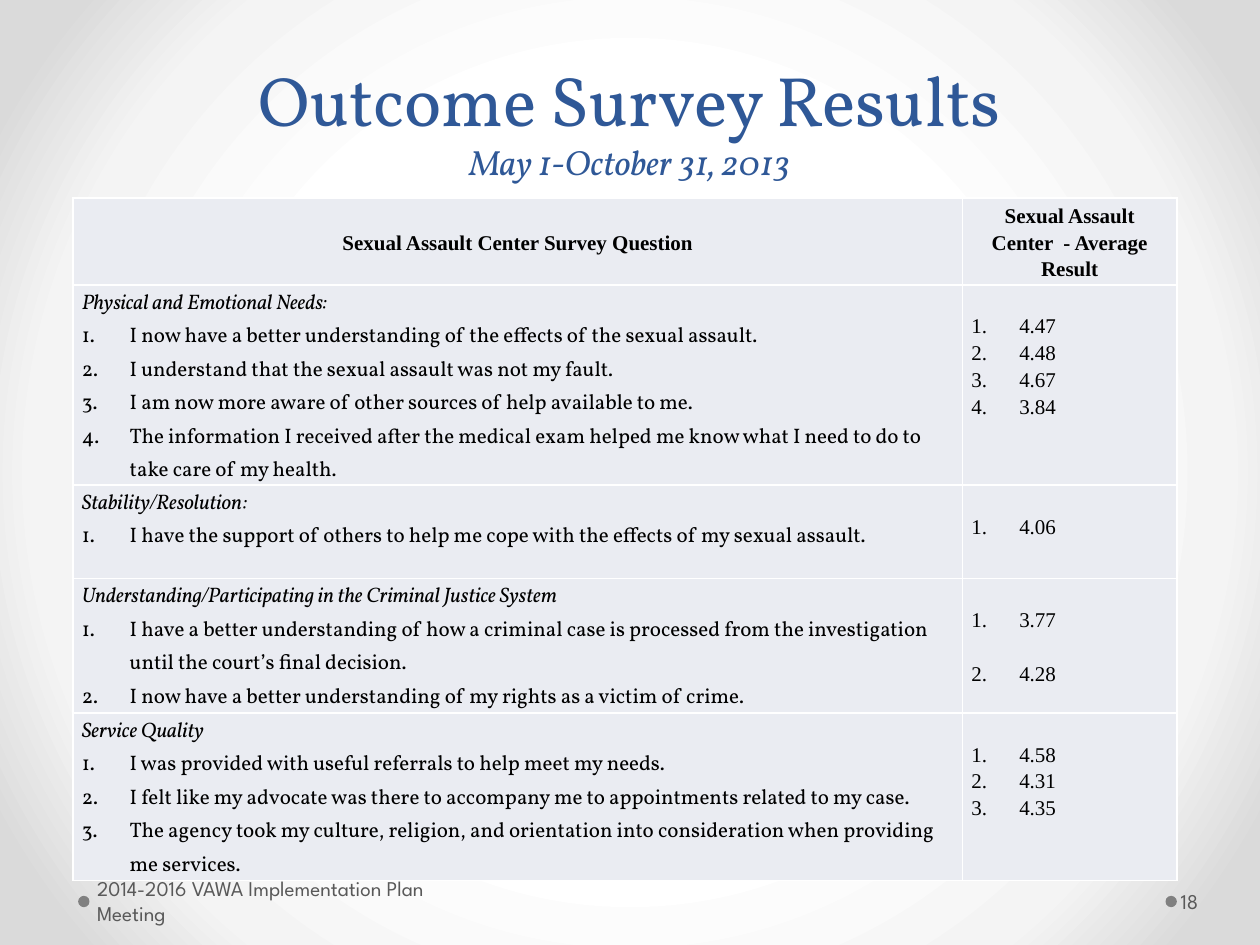
from dataclasses import dataclass

from pptx import Presentation
from pptx.dml.color import RGBColor
from pptx.enum.shapes import MSO_SHAPE
from pptx.enum.text import MSO_ANCHOR, PP_ALIGN
from pptx.oxml import parse_xml
from pptx.oxml.ns import nsdecls, qn
from pptx.util import Inches, Pt


@dataclass(frozen=True)
class Theme:
    heading: str = "2F5897"
    body: str = "000000"
    footer: str = "595959"
    dot: str = "808080"
    cell: str = "EAECF2"
    border: str = "FFFFFF"
    glow: tuple = ((50, "FFFFFF"), (76, "F4F4F4"), (92, "DADADA"))
    serif: str = "Vollkorn"
    table_serif: str = "Times New Roman"
    sans: str = "League Spartan"
    title_size: int = 40
    period_size: int = 20
    text_size: int = 12
    line_spacing: float = 1.15
    blank_line: float = 15.4


THEME = Theme()

# The slide is a grid of 100 columns by 75 rows
WIDTH, HEIGHT = Inches(10), Inches(7.5)
COLUMN, ROW = WIDTH // 100, HEIGHT // 75

QUESTION_COLUMNS = (70.6, 17)
TABLE_ROWS = (6.4, 15.9, 7.4, 10.7, 13.3)
HEADERS = ("Sexual Assault Center Survey Question",
           "Sexual Assault Center  - Average Result")

# Topic, questions, average results, lines left free between results
TOPICS = (
    ("Physical and Emotional Needs:",
     ("I now have a better understanding of the effects of the sexual assault.",
      "I understand that the sexual assault was not my fault.",
      "I am now more aware of other sources of help available to me.",
      "The information I received after the medical exam helped me know what "
      "I need to do to take care of my health."),
     ("4.47", "4.48", "4.67", "3.84"), 0),
    ("Stability/Resolution:",
     ("I have the support of others to help me cope with the effects of my sexual assault.",),
     ("4.06",), 0),
    ("Understanding/Participating in the Criminal Justice System",
     ("I have a better understanding of how a criminal case is processed from "
      "the investigation until the court’s final decision.",
      "I now have a better understanding of my rights as a victim of crime."),
     ("3.77", "4.28"), 1),
    ("Service Quality",
     ("I was provided with useful referrals to help meet my needs.",
      "I felt like my advocate was there to accompany me to appointments related to my case.",
      "The agency took my culture, religion, and orientation into consideration "
      "when providing me services."),
     ("4.58", "4.31", "4.35"), 0),
)


def grid(left, top, width, height):
    return (round(left * COLUMN), round(top * ROW),
            round(width * COLUMN), round(height * ROW))


def add_run(paragraph, text, font, size, color, bold=False, italic=False):
    run = paragraph.add_run()
    run.text = text
    run.font.name = font
    run.font.size = Pt(size)
    run.font.color.rgb = RGBColor.from_string(color)
    run.font.bold = bold
    run.font.italic = italic


def add_text_area(slide, box, anchor, insets=(0.1, 0.05, 0.1, 0.05)):
    frame = slide.shapes.add_textbox(*grid(*box)).text_frame
    frame.word_wrap = True
    frame.vertical_anchor = anchor
    (frame.margin_left, frame.margin_top,
     frame.margin_right, frame.margin_bottom) = map(Inches, insets)
    return frame.paragraphs[0]


def add_dot(slide, left, top):
    dot = slide.shapes.add_shape(MSO_SHAPE.OVAL, *grid(left, top, 0.9, 0.9))
    dot.shadow.inherit = False
    dot.fill.solid()
    dot.fill.fore_color.rgb = RGBColor.from_string(THEME.dot)
    dot.line.fill.background()


def paint_background(slide):
    slide.background.fill.gradient()
    linear = next(slide.element.iter(qn("a:gradFill")))
    stops = "".join(f'<a:gs pos="{share * 1000}"><a:srgbClr val="{color}"/></a:gs>'
                    for share, color in THEME.glow)
    radial = parse_xml(
        f'<a:gradFill {nsdecls("a")} rotWithShape="1"><a:gsLst>{stops}</a:gsLst>'
        '<a:path path="circle"><a:fillToRect l="50000" t="50000" r="50000" b="50000"/>'
        '</a:path></a:gradFill>')
    linear.getparent().replace(linear, radial)


def style_cell(cell):
    cell.margin_left = cell.margin_right = Inches(0.07)
    cell.margin_top = cell.margin_bottom = 0
    properties = cell._tc.get_or_add_tcPr()
    for side in ("lnL", "lnR", "lnT", "lnB"):
        properties.append(parse_xml(
            f'<a:{side} {nsdecls("a")} w="{Pt(1)}"><a:solidFill>'
            f'<a:srgbClr val="{THEME.border}"/></a:solidFill></a:{side}>'))
    cell.fill.solid()
    cell.fill.fore_color.rgb = RGBColor.from_string(THEME.cell)


def cell_paragraph(cell, text, font, bold=False, italic=False):
    paragraph = cell.text_frame.paragraphs[0]
    if paragraph.runs:
        paragraph = cell.text_frame.add_paragraph()
    paragraph.line_spacing = THEME.line_spacing
    add_run(paragraph, text, font, THEME.text_size, THEME.body, bold, italic)
    return paragraph


def numbered_paragraph(cell, text, font):
    paragraph = cell_paragraph(cell, text, font)
    properties = paragraph._p.get_or_add_pPr()
    properties.set("marL", str(Inches(0.38)))
    properties.set("indent", str(-Inches(0.38)))
    properties.append(parse_xml(
        f'<a:buFont {nsdecls("a")} typeface="+mj-lt"/>'))
    properties.append(parse_xml(
        f'<a:buAutoNum {nsdecls("a")} type="arabicPeriod"/>'))
    return paragraph


def add_survey_table(slide):
    box = grid(5.8, 15.7, sum(QUESTION_COLUMNS), sum(TABLE_ROWS))
    survey = slide.shapes.add_table(len(TABLE_ROWS), len(QUESTION_COLUMNS), *box).table
    for column, width in zip(survey.columns, QUESTION_COLUMNS):
        column.width = round(width * COLUMN)
    for row, height in zip(survey.rows, TABLE_ROWS):
        row.height = round(height * ROW)
    for cell in survey.iter_cells():
        style_cell(cell)

    # Header row
    for column, header in enumerate(HEADERS):
        cell = survey.cell(0, column)
        cell.vertical_anchor = MSO_ANCHOR.MIDDLE
        cell_paragraph(cell, header, THEME.table_serif, bold=True).alignment = PP_ALIGN.CENTER

    # One row for each topic
    for row, (topic, questions, results, free_lines) in enumerate(TOPICS, start=1):
        question_cell, result_cell = survey.cell(row, 0), survey.cell(row, 1)
        cell_paragraph(question_cell, topic, THEME.serif, italic=True)
        for question in questions:
            numbered_paragraph(question_cell, question, THEME.serif)
        result_cell.margin_top = Pt(THEME.blank_line)
        for position, result in enumerate(results):
            average = numbered_paragraph(result_cell, result, THEME.table_serif)
            if position and free_lines:
                average.space_before = Pt(free_lines * THEME.blank_line)


def add_title(slide):
    title = add_text_area(slide, (5, 2.5, 90, 12.5), MSO_ANCHOR.BOTTOM)
    title.alignment = PP_ALIGN.CENTER
    add_run(title, "Outcome Survey Results", THEME.serif, THEME.title_size, THEME.heading)
    title.add_line_break()
    add_run(title, "May 1-October 31, 2013", THEME.serif, THEME.period_size,
            THEME.heading, italic=True)


def add_footer(slide):
    meeting = add_text_area(slide, (7.2, 69.5, 31.1, 4), MSO_ANCHOR.MIDDLE,
                            (0.05, 0.05, 0.1, 0.05))
    page = add_text_area(slide, (93.4, 69.5, 6.1, 4), MSO_ANCHOR.MIDDLE,
                         (0.03, 0.05, 0.05, 0.05))
    for paragraph, text in ((meeting, "2014-2016 VAWA Implementation Plan Meeting"),
                            (page, "18")):
        add_run(paragraph, text, THEME.sans, THEME.text_size, THEME.footer)


def main():
    presentation = Presentation()
    presentation.slide_width, presentation.slide_height = WIDTH, HEIGHT
    slide = presentation.slides.add_slide(presentation.slide_layouts[6])
    paint_background(slide)
    for left in (92.5, 6.2):
        add_dot(slide, left, 71.1)
    add_title(slide)
    add_footer(slide)
    add_survey_table(slide)
    presentation.save("out.pptx")


if __name__ == "__main__":
    main()
